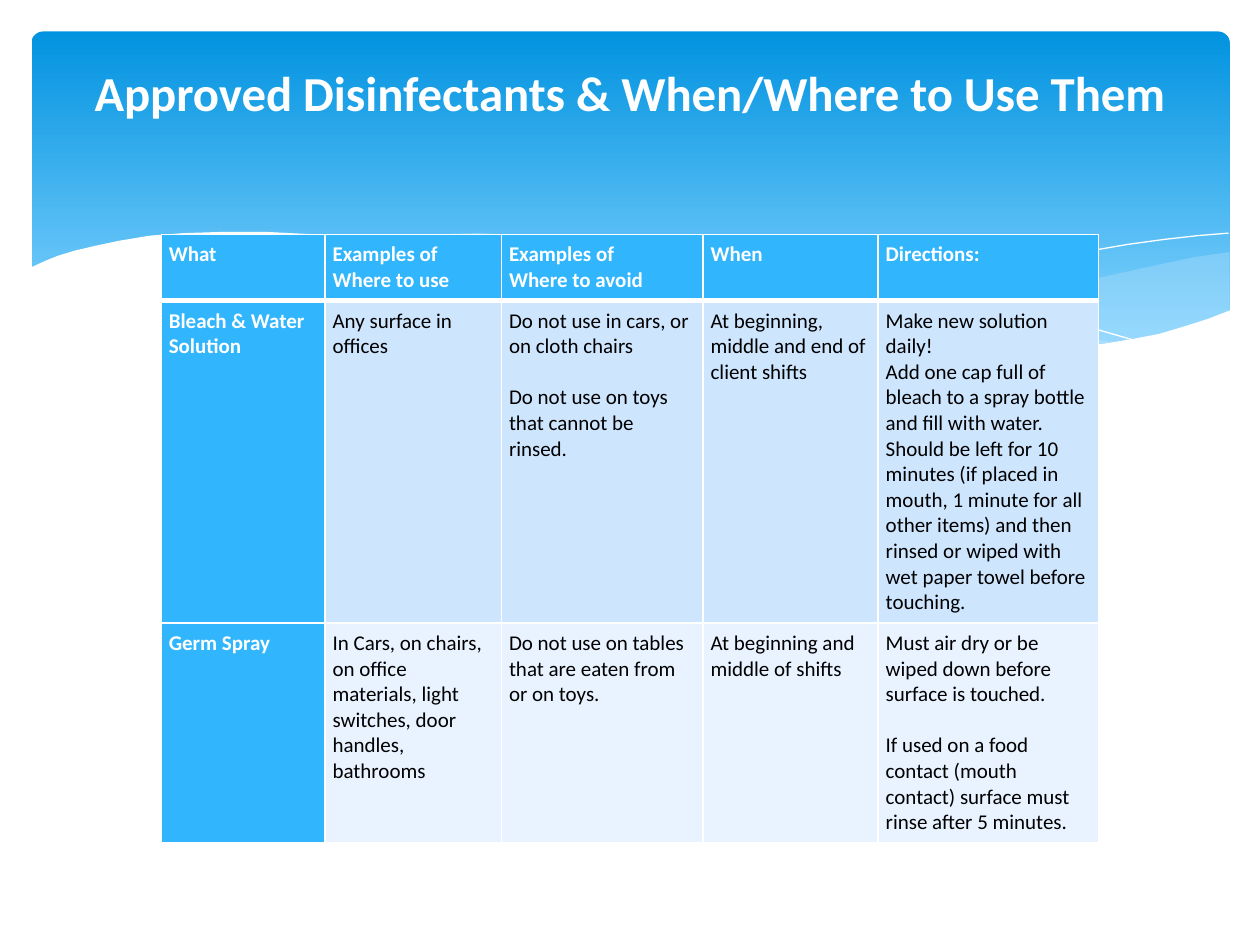
from lxml import etree
from pptx import Presentation
from pptx.dml.color import RGBColor
from pptx.enum.shapes import MSO_SHAPE
from pptx.enum.text import MSO_ANCHOR, PP_ALIGN
from pptx.oxml.ns import qn
from pptx.util import Inches, Pt

WHITE = RGBColor(0xFF, 0xFF, 0xFF)
BLACK = RGBColor(0x00, 0x00, 0x00)
BANNER_TOP = RGBColor(0x02, 0x93, 0xE0)
BANNER_BOTTOM = RGBColor(0x83, 0xD3, 0xFE)
WAVE = RGBColor(0xC6, 0xE7, 0xFC)
HEADING = RGBColor(0x31, 0xB6, 0xFD)
BANDS = [RGBColor(0xCE, 0xE5, 0xFE), RGBColor(0xE8, 0xF3, 0xFF)]

RIGHT_WAVE = [
    (9.76, 2), (9.48, 2.04), (9.06, 2.13), (8.61, 2.23), (8.05, 2.37), (7.53, 2.48),
    (7.06, 2.57), (6.61, 2.65), (6.91, 2.69), (7.32, 2.74), (7.69, 2.77), (8.03, 2.78),
    (8.44, 2.77), (8.72, 2.74), (8.97, 2.7), (9.21, 2.65), (9.42, 2.59), (9.63, 2.52),
    (9.76, 2.47)]
MIDDLE_WAVE = [
    (8.93, 2.73), (8.66, 2.69), (8.07, 2.6), (7.41, 2.47), (6.68, 2.31), (6.29, 2.22),
    (5.84, 2.11), (5.41, 2.03), (5.02, 1.96), (4.65, 1.91), (4.2, 1.87), (3.8, 1.85),
    (3.44, 1.86), (3.13, 1.88), (2.86, 1.91), (3.23, 1.96), (3.62, 2.03), (4.04, 2.11),
    (4.49, 2.22), (5.3, 2.4), (5.84, 2.52), (6.34, 2.61), (6.8, 2.68), (7.22, 2.74),
    (7.61, 2.77), (7.96, 2.78), (8.28, 2.78), (8.57, 2.77), (8.76, 2.75)]
FALLING_LINE = [
    (3.09, 1.95), (3.28, 1.92), (3.53, 1.89), (3.87, 1.87), (4.33, 1.87), (4.69, 1.89),
    (5.1, 1.92), (5.56, 1.97), (6.08, 2.04), (6.65, 2.13), (7.27, 2.26), (7.95, 2.41),
    (8.31, 2.51), (8.69, 2.61), (9.07, 2.72)]
RISING_LINE = [
    (6.13, 2.57), (6.53, 2.46), (6.95, 2.35), (7.48, 2.23), (8.06, 2.1), (8.36, 2.04),
    (8.66, 1.99), (8.95, 1.94), (9.24, 1.9), (9.51, 1.87), (9.75, 1.85)]
PAGE_EDGE = [
    (9.77, 2.46), (9.59, 2.53), (9.4, 2.59), (9.2, 2.65), (8.99, 2.69), (8.75, 2.73),
    (8.5, 2.75), (8.23, 2.77), (7.93, 2.76), (7.61, 2.75), (7.26, 2.72), (6.88, 2.68),
    (6.48, 2.62), (6.03, 2.54), (5.55, 2.45), (5.03, 2.33), (4.47, 2.2), (3.91, 2.07),
    (3.4, 1.97), (2.92, 1.9), (2.5, 1.86), (2.11, 1.84), (1.77, 1.84), (1.46, 1.85),
    (1.19, 1.87), (0.95, 1.91), (0.76, 1.95), (0.59, 1.99), (0.46, 2.03), (0.36, 2.07),
    (0.23, 2.13), (0.23, 3.29), (9.77, 3.29)]

COLUMN_WIDTHS = [1.3, 1.4, 1.6, 1.39, 1.75]
ROW_HEIGHTS = [0.52, 2.55, 1.74]
GAP = "gap"
GUIDE = [
    [["What"], ["Examples of Where to use"], ["Examples of", "Where to avoid"],
     ["When"], ["Directions:"]],
    [["Bleach & Water Solution"], ["Any surface in offices"],
     ["Do not use in cars, or on cloth chairs", GAP,
      "Do not use on toys that cannot be rinsed."],
     ["At beginning, middle and end of client shifts"],
     ["Make new solution daily!",
      "Add one cap full of bleach to a spray bottle and fill with water.",
      "Should be left for 10 minutes (if placed in mouth, 1 minute for all other items) "
      "and then rinsed or wiped with wet paper towel before touching."]],
    [["Germ Spray"],
     ["In Cars, on chairs, on office materials, light switches, door handles, bathrooms"],
     ["Do not use on tables that are eaten from or on toys."],
     ["At beginning and middle of shifts"],
     ["Must air dry or be wiped down before surface is touched.", GAP,
      "If used on a food contact (mouth contact) surface must rinse after 5 minutes."]],
]


def write_text(frame, lines, size=12, color=BLACK, bold=False, align=PP_ALIGN.LEFT):
    frame.word_wrap = True
    paragraph = None
    space_before = 0
    for line in lines:
        if line == GAP:
            space_before = 14.65
            continue
        paragraph = frame.add_paragraph() if paragraph else frame.paragraphs[0]
        paragraph.alignment = align
        paragraph.space_before = Pt(space_before)
        space_before = 0
        run = paragraph.add_run()
        run.text = line
        run.font.name = "Calibri"
        run.font.size = Pt(size)
        run.font.bold = bold
        run.font.color.rgb = color


def add_banner(slide):
    banner = slide.shapes.add_shape(MSO_SHAPE.ROUNDED_RECTANGLE, Inches(0.25),
                                    Inches(0.25), Inches(9.51), Inches(2.7))
    banner.adjustments[0] = 0.034
    banner.shadow.inherit = False
    banner.line.fill.background()
    banner.fill.gradient()
    banner.fill.gradient_angle = 270
    stops = [(0, BANNER_TOP), (0.9, BANNER_BOTTOM)]
    for stop, (position, color) in zip(banner.fill.gradient_stops, stops):
        stop.position = position
        stop.color.rgb = color


def add_curve(slide, points, closed):
    start, *rest = [(Inches(x), Inches(y)) for x, y in points]
    builder = slide.shapes.build_freeform(*start)
    builder.add_line_segments(rest, close=closed)
    curve = builder.convert_to_shape()
    curve.shadow.inherit = False
    return curve


def add_wave(slide, points, color, opacity=100):
    wave = add_curve(slide, points, True)
    wave.line.fill.background()
    wave.fill.solid()
    wave.fill.fore_color.rgb = color
    if opacity < 100:
        tint = wave._element.spPr.find(".//" + qn("a:srgbClr"))
        etree.SubElement(tint, qn("a:alpha"), val=str(opacity * 1000))


def add_wave_line(slide, points):
    wave_line = add_curve(slide, points, False)
    wave_line.fill.background()
    wave_line.line.color.rgb = WHITE
    wave_line.line.width = Pt(0)


def set_borders(cell, **widths):
    properties = cell._tc.get_or_add_tcPr()
    for index, side in enumerate("LRTB"):
        border = etree.Element(qn(f"a:ln{side}"), w=str(Pt(widths.get(side, 1))))
        fill = etree.SubElement(border, qn("a:solidFill"))
        etree.SubElement(fill, qn("a:srgbClr"), val=str(WHITE))
        properties.insert(index, border)


def add_guide(slide):
    guide = slide.shapes.add_table(
        len(ROW_HEIGHTS), len(COLUMN_WIDTHS), Inches(1.28), Inches(1.86),
        Inches(sum(COLUMN_WIDTHS)), Inches(sum(ROW_HEIGHTS))).table
    guide.horz_banding = False
    for column, width in zip(guide.columns, COLUMN_WIDTHS):
        column.width = Inches(width)
    for row, height in zip(guide.rows, ROW_HEIGHTS):
        row.height = Inches(height)
    for r, entries in enumerate(GUIDE):
        for c, lines in enumerate(entries):
            cell = guide.cell(r, c)
            heading = r == 0 or c == 0
            cell.margin_left = cell.margin_right = Inches(0.06)
            cell.margin_top = cell.margin_bottom = Inches(0.06)
            cell.fill.solid()
            cell.fill.fore_color.rgb = HEADING if heading else BANDS[r - 1]
            set_borders(cell, T=3 if r == 1 else 1, B=3 if r == 0 else 1)
            write_text(cell.text_frame, lines, bold=heading,
                       color=WHITE if heading else BLACK)


def place_title(slide):
    title = slide.shapes.title
    title.left, title.top = Inches(0.5), Inches(0.37)
    title.width, title.height = Inches(9), Inches(1.37)
    title.text_frame.vertical_anchor = MSO_ANCHOR.TOP
    title.text_frame.margin_top = Inches(0.13)
    write_text(title.text_frame, ["Approved Disinfectants & When/Where to Use Them"],
               size=27.9, color=WHITE, bold=True, align=PP_ALIGN.CENTER)
    slide.shapes._spTree.append(title._element)


def main():
    deck = Presentation()
    deck.slide_width, deck.slide_height = Inches(10), Inches(7.5)
    slide = deck.slides.add_slide(deck.slide_layouts[5])
    add_banner(slide)
    add_wave(slide, RIGHT_WAVE, WAVE, opacity=29)
    add_wave(slide, MIDDLE_WAVE, WAVE, opacity=40)
    add_wave_line(slide, FALLING_LINE)
    add_wave_line(slide, RISING_LINE)
    add_wave(slide, PAGE_EDGE, WHITE)
    add_guide(slide)
    place_title(slide)
    deck.save("out.pptx")


if __name__ == "__main__":
    main()
